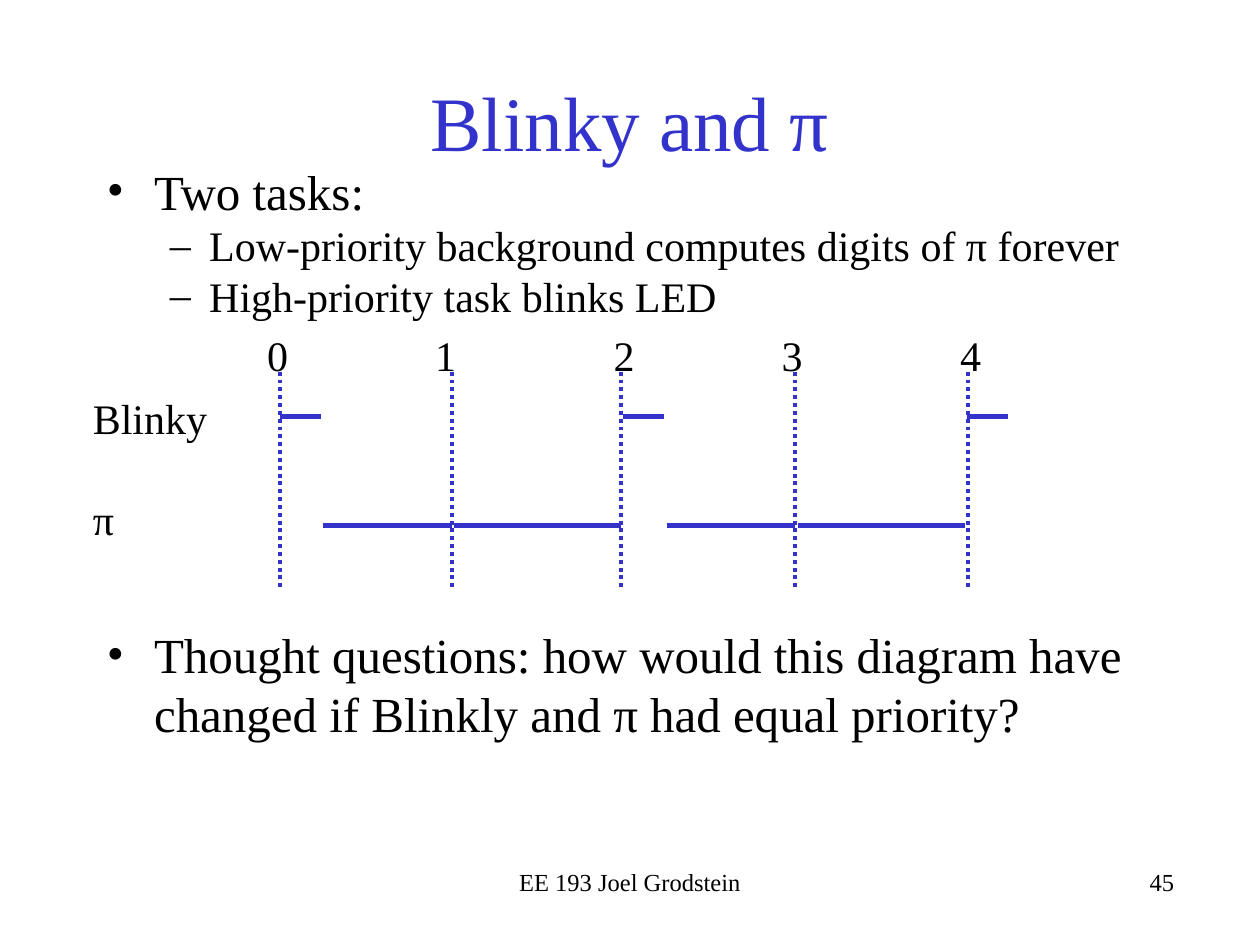
from lxml import etree
from pptx import Presentation
from pptx.dml.color import RGBColor
from pptx.enum.dml import MSO_LINE
from pptx.enum.shapes import MSO_CONNECTOR
from pptx.enum.text import MSO_ANCHOR, PP_ALIGN
from pptx.oxml.ns import qn
from pptx.util import Pt

LEFT, CENTER, RIGHT = PP_ALIGN.LEFT, PP_ALIGN.CENTER, PP_ALIGN.RIGHT
TOP, MIDDLE = MSO_ANCHOR.TOP, MSO_ANCHOR.MIDDLE
STRAIGHT, DOTTED = MSO_CONNECTOR.STRAIGHT, MSO_LINE.ROUND_DOT
COLORS = {"text": "000000", "accent": "3333CC"}
FONT = "Times New Roman"

presentation = Presentation()
presentation.slide_width, presentation.slide_height = Pt(720), Pt(540)
slide = presentation.slides.add_slide(presentation.slide_layouts[6])


def add_text(box, paragraphs, anchor=TOP, color="text"):
    """Add a text box; each paragraph is (text, size, format values).

    Besides paragraph attributes, the values may hold a bullet
    (character, left margin, hanging indent) and tab stops in points.
    """
    shape = slide.shapes.add_textbox(*map(Pt, box))
    frame = shape.text_frame
    frame.word_wrap, frame.vertical_anchor = True, anchor
    for index, (text, size, values) in enumerate(paragraphs):
        paragraph = frame.add_paragraph() if index else frame.paragraphs[0]
        run = paragraph.add_run()
        run.text = text
        run.font.name, run.font.size = FONT, Pt(size)
        run.font.color.rgb = RGBColor.from_string(COLORS[color])
        for name, value in values.items():
            if name not in ("bullet", "tabs"):
                setattr(paragraph, name, value)
        properties = paragraph._p.get_or_add_pPr()
        if "bullet" in values:
            character, margin, hanging = values["bullet"]
            properties.set("marL", str(Pt(margin)))
            properties.set("indent", str(-Pt(hanging)))
            etree.SubElement(properties, qn("a:buFont"), typeface=FONT)
            etree.SubElement(properties, qn("a:buChar"), char=character)
        if "tabs" in values:
            tab_list = etree.SubElement(properties, qn("a:tabLst"))
            for stop in values["tabs"]:
                etree.SubElement(tab_list, qn("a:tab"), pos=str(Pt(stop)), algn="l")


def add_line(x1, y1, x2, y2, width, dash=None):
    connector = slide.shapes.add_connector(STRAIGHT, Pt(x1), Pt(y1), Pt(x2), Pt(y2))
    connector.line.color.rgb = RGBColor.from_string(COLORS["accent"])
    connector.line.width = Pt(width)
    if dash:
        connector.line.dash_style = dash
    etree.SubElement(connector._element.spPr, qn("a:effectLst"))


# Title, bullets and footer
main_bullet = {"bullet": ("•", 27, 27), "space_before": Pt(5.6)}
sub_bullet = {"bullet": ("–", 58.5, 22.5), "level": 1, "space_before": Pt(0)}
add_text((54, 24, 612, 90), [("Blinky and π", 44, {"alignment": CENTER})], MIDDLE, "accent")
add_text((54, 88.5, 612, 114.5), [
    ("Two tasks:", 28, main_bullet),
    ("Low-priority background computes digits of π forever", 24, sub_bullet),
    ("High-priority task blinks LED", 24, sub_bullet),
])
add_text((54, 353.5, 612, 138.5), [
    ("Thought questions: how would this diagram have changed "
     "if Blinkly and π had equal priority?", 28, main_bullet),
])
add_text((246, 492, 228, 36), [("EE 193 Joel Grodstein", 14, {"alignment": CENTER})])
add_text((450, 492, 228, 36), [("45", 14, {"alignment": RIGHT})])

# Timing diagram: task names, time labels, time marks, then running periods
add_text((46, 220.5, 88, 94.5), [
    ("Blinky", 24, {"alignment": LEFT}),
    ("π", 24, {"alignment": LEFT, "space_before": Pt(29)}),
])
add_text((145.5, 185, 428, 36), [
    ("\t".join(str(second) for second in range(5)), 24, {"tabs": (96, 198, 294, 396)}),
])

time_marks = (160, 258.5, 355, 454.5, 553)
for x in time_marks:
    add_line(x, 212.4, x, 336.2, 2.25, DOTTED)

running_periods = {
    238: [(160, 183.5), (356, 379.5), (552.5, 576)],
    300.5: [(184.5, 258.5), (259.5, 355), (381, 454.5), (456, 551.5)],
}
for y, periods in running_periods.items():
    for start, end in periods:
        add_line(start, y, end, y, 3)

presentation.save("out.pptx")
